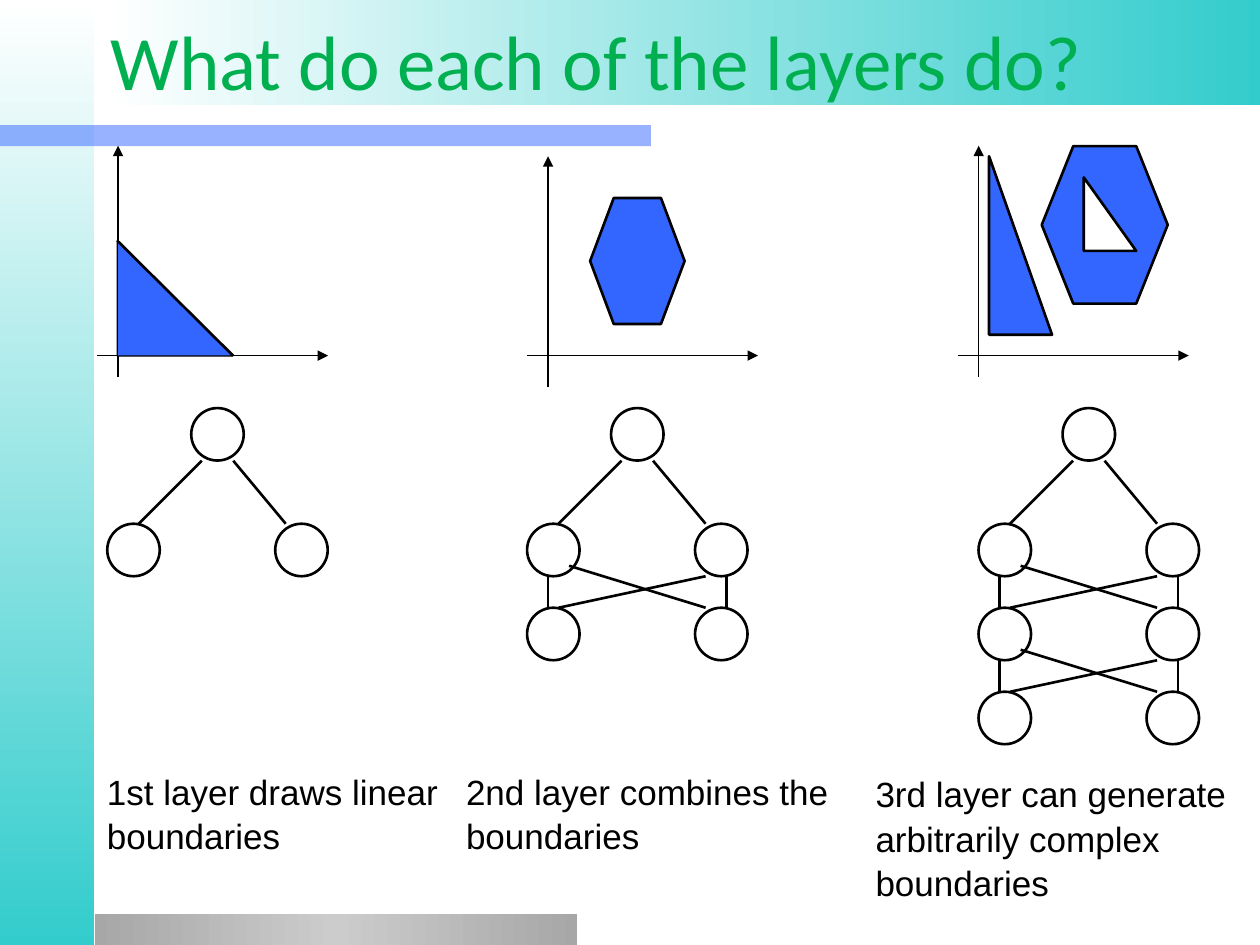
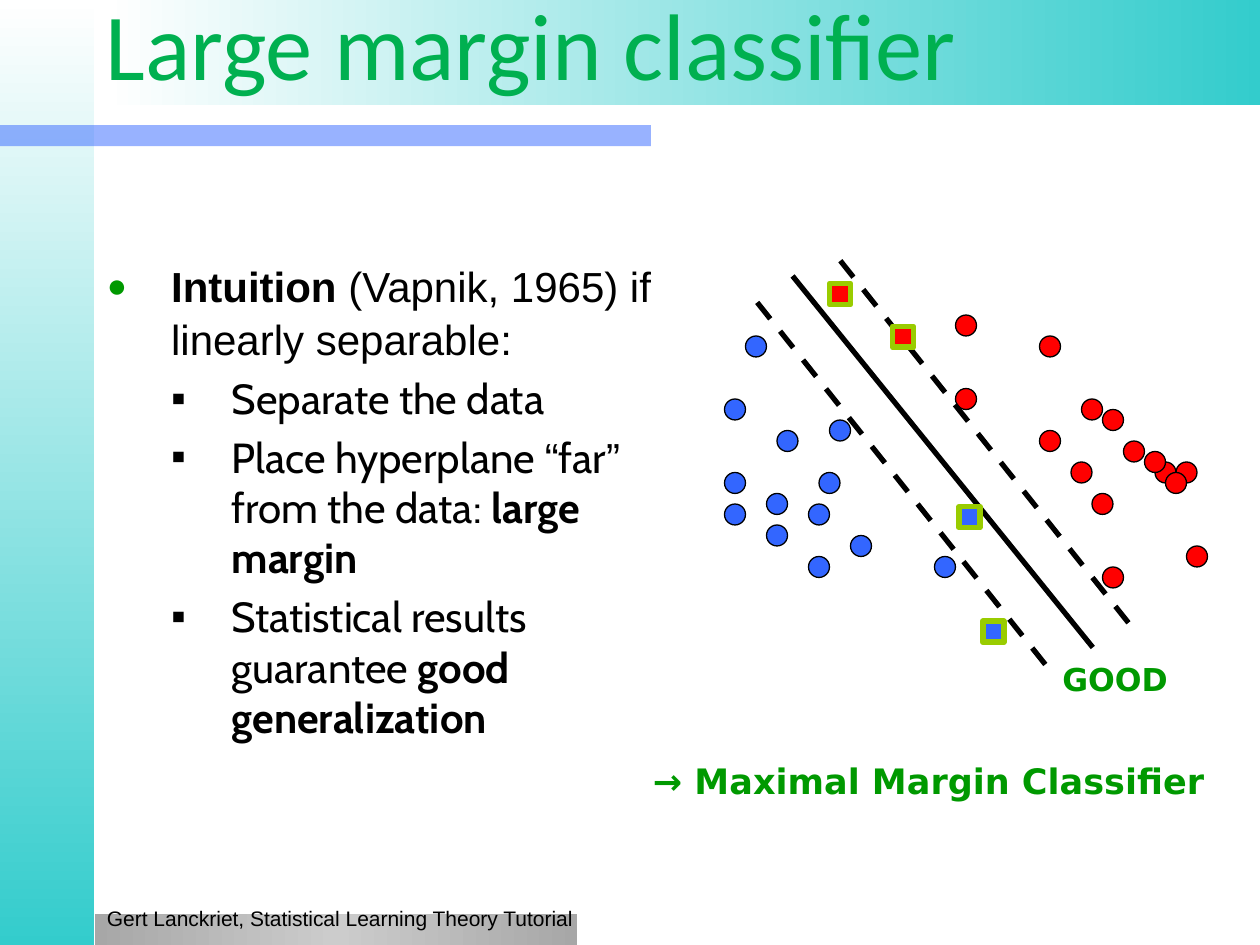
"""Build two slides on what network layers do and on the large margin classifier."""
from lxml.etree import SubElement
from pptx import Presentation
from pptx.dml.color import RGBColor
from pptx.enum.dml import MSO_LINE
from pptx.enum.shapes import MSO_CONNECTOR, MSO_SHAPE
from pptx.enum.text import MSO_ANCHOR
from pptx.oxml.ns import qn
from pptx.util import Pt

COLORS = {
    "ink": "000000", "white": "FFFFFF", "teal": "33CCCC", "blue": "3366FF",
    "red": "FF0000", "title": "00B050", "green": "009900", "lime": "99CC00",
    "grey": "A7A7A7", "silver": "CCCCCC",
}

GRADIENT_BANDS = [
    ((0, 0, 54, 540), ("white", "teal"), 90),
    ((54, 522, 276, 18), ("grey", "silver", "grey"), 0),
    ((60.5, 0, 659.5, 60), ("white", "teal"), 0),
]
ACCENT_BAR = (0, 71.5, 372, 12)

LAYERS_TITLE = "What do each of the layers do?"
LAYERS = [
    {"caption": "1st layer draws linear boundaries", "box": (54, 435.6, 205, 55.4),
     "axis": (55.5, 203.2, 215.3), "network_left": 61.3, "rows": 1,
     "regions": [(MSO_SHAPE.RIGHT_TRIANGLE, (67, 137.5, 66, 66), "blue", 0.75)],
     "boundary": [(67, 137.5, 133.2, 203.2)]},
    {"caption": "2nd layer combines the boundaries", "box": (259.2, 435.6, 221.8, 55.4),
     "axis": (301.2, 203.2, 221.3), "network_left": 301.2, "rows": 2,
     "regions": [(MSO_SHAPE.HEXAGON, (337.2, 113.2, 54, 72), "blue", 1.5)],
     "boundary": []},
    {"caption": "3rd layer can generate arbitrarily complex boundaries",
     "box": (493.2, 437, 257.8, 80),
     "axis": (547.3, 203.2, 215.3), "network_left": 559.2, "rows": 3,
     "regions": [(MSO_SHAPE.HEXAGON, (595.3, 83.5, 72, 90), "blue", 1.5),
                 (MSO_SHAPE.RIGHT_TRIANGLE, (565.2, 89.3, 36, 102), "blue", 1.5),
                 (MSO_SHAPE.RIGHT_TRIANGLE, (619.3, 101.4, 30, 42), "white", 1.5)],
     "boundary": []},
]
AXIS_LENGTH, AXIS_INSET = 132, 12
NODE, OUTPUT_TOP, ROW_TOP, ROW_PITCH, NODE_GAP = 30, 233.2, 299.3, 48, 96
OUTPUT_LINKS = [(18, 0, 54, -36), (102, 0, 72, -36)]
ROW_LINKS = [(18, 0, 102, -18), (102, 0, 24, -24), (12, 0, 12, -18), (114, 0, 114, -18)]

MARGIN_TITLE = "Large margin classifier"
INTUITION = [
    (0, [("Intuition", "bold"), (" (Vapnik, 1965) if linearly separable:", "plain")]),
    (1, [("Separate the data", "plain")]),
    (1, [("Place hyperplane ", "plain"), ("“", "quote"), ("far", "plain"), ("”", "quote"),
         (" from the data: ", "plain"), ("large margin", "bold")]),
    (1, [("Statistical results guarantee ", "plain"), ("good generalization", "bold")]),
]
BULLETS = [
    {"char": "●", "color": "green", "size": 80, "left": 36.7, "hang": 36.7,
     "font": "Arial", "spacing": 1.05},
    {"char": "▪", "color": "ink", "size": 100, "left": 71.3, "hang": 34.6,
     "font": "Cabin", "spacing": 1},
]
SAMPLE = 12
SAMPLES = {
    "blue": [(426, 192), (414, 270), (444, 246), (414, 288), (438, 300), (462, 288),
             (486, 306), (438, 282), (414, 228), (474, 240), (534, 318), (468, 270),
             (462, 318)],
    "red": [(546, 180), (594, 192), (618, 228), (546, 222), (642, 252), (660, 264),
            (624, 282), (672, 264), (678, 312), (630, 324), (594, 246), (630, 234),
            (612, 264), (654, 258), (666, 270)],
}
SUPPORT_VECTORS = {"red": [(510, 186.5), (474, 162)], "blue": [(561.6, 355), (548, 289.5)]}
HYPERPLANE = (452.9, 157.7, 624.5, 370)
MARGINS = [(432.7, 172.8, 598.3, 380.9), (480.2, 149, 645.8, 357.1)]
VERDICTS = [("GOOD", (600, 373.7, 75, 29), 18),
            ("→ Maximal Margin Classifier", (366, 430.6, 330.5, 31), 20)]
CREDIT = "Gert Lanckriet, Statistical Learning Theory Tutorial"


def rgb(name):
    return RGBColor.from_string(COLORS[name])


def points(values):
    return [Pt(value) for value in values]


def add_figure(slide, kind, box, fill=None, line=None, width=0.75):
    figure = slide.shapes.add_shape(kind, *points(box))
    figure.shadow.inherit = False
    if fill:
        figure.fill.solid()
        figure.fill.fore_color.rgb = rgb(fill)
    else:
        figure.fill.background()
    if line:
        figure.line.color.rgb = rgb(line)
        figure.line.width = Pt(width)
    else:
        figure.line.fill.background()
    return figure


def add_line(slide, ends, width, arrow=False, dashed=False):
    line = slide.shapes.add_connector(MSO_CONNECTOR.STRAIGHT, *points(ends))
    line.line.color.rgb = rgb("ink")
    line.line.width = Pt(width)
    if dashed:
        line.line.dash_style = MSO_LINE.DASH
    properties = line._element.spPr
    if arrow:
        SubElement(properties.find(qn("a:ln")), qn("a:tailEnd"), type="triangle")
    SubElement(properties, qn("a:effectLst"))


def style(paragraph, font, size, color, bold=None, spacing=1):
    paragraph.font.name = font
    paragraph.font.size = Pt(size)
    paragraph.font.color.rgb = rgb(color)
    paragraph.font.bold = bold
    paragraph.line_spacing = spacing


def add_label(slide, text, box, font, size, color, bold=None, wrap=True, spacing=1):
    label = slide.shapes.add_textbox(*points(box))
    label.text_frame.word_wrap = wrap
    paragraph = label.text_frame.paragraphs[0]
    paragraph.add_run().text = text
    style(paragraph, font, size, color, bold, spacing)
    return label


def add_base_slide(deck, title, title_box, title_size):
    slide = deck.slides.add_slide(deck.slide_layouts[6])
    for box, colors, angle in GRADIENT_BANDS:
        band = add_figure(slide, MSO_SHAPE.RECTANGLE, box)
        band.fill.gradient()
        band.fill.gradient_angle = -angle % 360
        stops = band._element.spPr.find(qn("a:gradFill")).find(qn("a:gsLst"))
        stops.clear()
        for index, color in enumerate(colors):
            position = 100000 * index // (len(colors) - 1)
            stop = SubElement(stops, qn("a:gs"), pos=str(position))
            SubElement(stop, qn("a:srgbClr"), val=COLORS[color])
    bar = add_figure(slide, MSO_SHAPE.RECTANGLE, ACCENT_BAR, "blue")
    bar_color = bar._element.spPr.find(qn("a:solidFill")).find(qn("a:srgbClr"))
    SubElement(bar_color, qn("a:alpha"), val="50000")
    heading = add_label(slide, title, title_box, "Calibri", title_size, "title")
    heading.text_frame.vertical_anchor = MSO_ANCHOR.BOTTOM
    return slide


def add_links(slide, links, left, top):
    for x1, y1, x2, y2 in links:
        add_line(slide, (left + x1, top + y1, left + x2, top + y2), 1.5)


def add_network(slide, left, rows):
    nodes = [(left + NODE_GAP / 2, OUTPUT_TOP)]
    for row in range(rows):
        top = ROW_TOP + row * ROW_PITCH
        nodes += [(left, top), (left + NODE_GAP, top)]
        add_links(slide, ROW_LINKS if row else OUTPUT_LINKS, left, top)
    for x, y in nodes:
        add_figure(slide, MSO_SHAPE.OVAL, (x, y, NODE, NODE), None, "ink", 1.5)


def add_layer(slide, layer):
    left, base, bottom = layer["axis"]
    upright = left + AXIS_INSET
    add_line(slide, (left, base, left + AXIS_LENGTH, base), 0.75, arrow=True)
    add_line(slide, (upright, bottom, upright, bottom - AXIS_LENGTH), 0.75, arrow=True)
    for kind, box, fill, width in layer["regions"]:
        add_figure(slide, kind, box, fill, "ink", width)
    for ends in layer["boundary"]:
        add_line(slide, ends, 1.5)
    add_network(slide, layer["network_left"], layer["rows"])
    add_label(slide, layer["caption"], layer["box"], "Arial", 20, "ink", spacing=1.05)


def add_intuition(slide):
    frame = slide.shapes.add_textbox(*points((54, 144, 337.7, 363.6))).text_frame
    frame.word_wrap = True
    for index, (level, runs) in enumerate(INTUITION):
        bullet = BULLETS[level]
        paragraph = frame.add_paragraph() if index else frame.paragraphs[0]
        paragraph.level = level
        paragraph.space_before = Pt(4.8)
        properties = paragraph._p.get_or_add_pPr()
        properties.set("marL", str(Pt(bullet["left"])))
        properties.set("indent", str(-Pt(bullet["hang"])))
        style(paragraph, bullet["font"], 24, "ink", spacing=bullet["spacing"])
        defaults = properties.find(qn("a:defRPr"))
        properties.remove(defaults)
        tint = SubElement(properties, qn("a:buClr"))
        SubElement(tint, qn("a:srgbClr"), val=COLORS[bullet["color"]])
        SubElement(properties, qn("a:buSzPct"), val=str(bullet["size"] * 1000))
        SubElement(properties, qn("a:buFont"), typeface="Arial")
        SubElement(properties, qn("a:buChar"), char=bullet["char"])
        properties.append(defaults)
        for text, kind in runs:
            run = paragraph.add_run()
            run.text = text
            if kind == "bold":
                run.font.bold = True
            elif kind == "quote":
                run.font.name = "Arial"


def add_samples(slide, groups, kind, line, width):
    for color, places in groups.items():
        for x, y in places:
            add_figure(slide, kind, (x, y, SAMPLE, SAMPLE), color, line, width)


def build_layers(deck):
    slide = add_base_slide(deck, LAYERS_TITLE, (56.2, 3.6, 671.8, 60.5), 44)
    for layer in LAYERS:
        add_layer(slide, layer)


def build_margin(deck):
    slide = add_base_slide(deck, MARGIN_TITLE, (53.3, -2.2, 612, 62.6), 54)
    add_samples(slide, SAMPLES, MSO_SHAPE.OVAL, "ink", 0.75)
    add_line(slide, HYPERPLANE, 3)
    for ends in MARGINS:
        add_line(slide, ends, 3, dashed=True)
    for text, box, size in VERDICTS:
        add_label(slide, text, box, "DejaVu Sans", size, "green", bold=True, wrap=False)
    add_intuition(slide)
    add_samples(slide, SUPPORT_VECTORS, MSO_SHAPE.RECTANGLE, "lime", 3.25)
    add_label(slide, CREDIT, (54, 514, 289.4, 21.6), "Arial", 12, "ink")


def main():
    deck = Presentation()
    deck.slide_width, deck.slide_height = Pt(720), Pt(540)
    build_layers(deck)
    build_margin(deck)
    deck.save("out.pptx")


if __name__ == "__main__":
    main()
